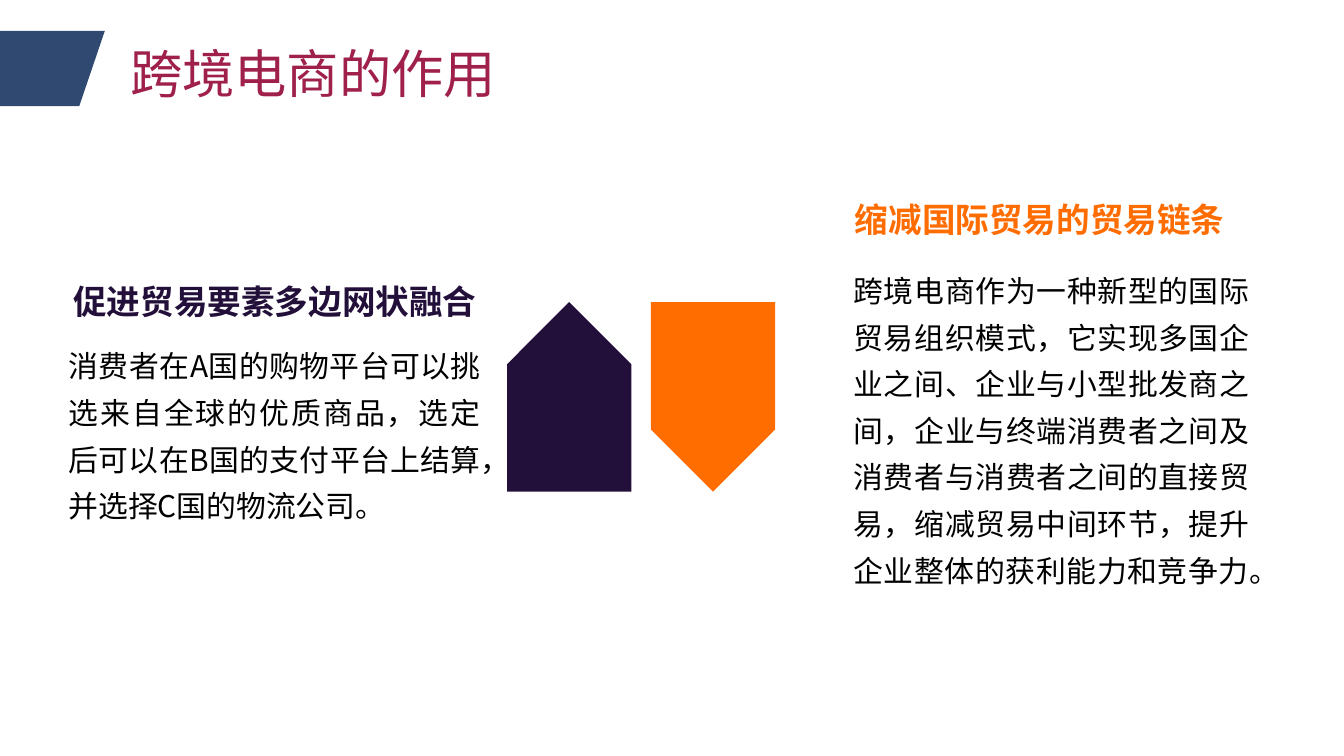
from dataclasses import dataclass

from lxml import etree
from pptx import Presentation
from pptx.dml.color import RGBColor
from pptx.enum import shapes, text
from pptx.oxml import ns
from pptx.util import Pt

FONT = "Noto Sans CJK SC"
NAVY, ORANGE, PURPLE, CRIMSON, BLACK = "304971", "FF6C00", "23103A", "A0204C", "000000"


@dataclass
class Passage:
    placeholder: int
    box: tuple
    wording: str
    size: float
    color: str
    align: text.PP_ALIGN
    bold: bool = False
    spacing: float = 1.0


@dataclass
class Arrow:
    box: tuple
    rotation: float
    color: str


PASSAGES = [
    Passage(0, (62.64, 18.72, 242.64, 41.04), "跨境电商的作用", 28, CRIMSON, text.PP_ALIGN.LEFT),
    Passage(1, (29.52, 146.88, 235.44, 28.8), "促进贸易要素多边网状融合", 18, PURPLE,
            text.PP_ALIGN.CENTER, bold=True),
    Passage(2, (29.52, 177.12, 235.44, 108),
            "消费者在A国的购物平台可以挑选来自全球的优质商品，选定后可以在B国的支付平台上结算，"
            "并选择C国的物流公司。",
            16, BLACK, text.PP_ALIGN.JUSTIFY, spacing=1.3),
    Passage(3, (449.28, 102.96, 215.28, 28.8), "缩减国际贸易的贸易链条", 18, ORANGE,
            text.PP_ALIGN.CENTER, bold=True),
    Passage(4, (450, 136.8, 226.8, 183.6),
            "跨境电商作为一种新型的国际贸易组织模式，它实现多国企业之间、企业与小型批发商之间，"
            "企业与终端消费者之间及消费者与消费者之间的直接贸易，缩减贸易中间环节，"
            "提升企业整体的获利能力和竞争力。",
            16, BLACK, text.PP_ALIGN.JUSTIFY, spacing=1.3),
]

ARROWS = [
    Arrow((331.2, 179.28, 101.52, 66.6), 90, ORANGE),
    Arrow((254.16, 179.28, 101.52, 66.6), 270, PURPLE),
]


def apply(target, formats: dict) -> None:
    for attribute, value in formats.items():
        setattr(target, attribute, value)


def rgb(color: str) -> RGBColor:
    return RGBColor.from_string(color)


def paint(shape, color: str) -> None:
    shape.shadow.inherit = False
    shape.fill.solid()
    shape.fill.fore_color.rgb = rgb(color)
    shape.line.fill.background()


def write_passage(slide, passage: Passage) -> None:
    holder = slide.placeholders[passage.placeholder]
    apply(holder, dict(zip(("left", "top", "width", "height"), map(Pt, passage.box))))
    frame = holder.text_frame
    apply(frame, {
        "word_wrap": True,
        "auto_size": text.MSO_AUTO_SIZE.SHAPE_TO_FIT_TEXT,
        "vertical_anchor": text.MSO_ANCHOR.TOP,
    })
    paragraph = frame.paragraphs[0]
    properties = paragraph._p.get_or_add_pPr()
    properties.set("marL", "0")
    properties.set("indent", "0")
    etree.SubElement(properties, ns.qn("a:buNone"))
    apply(paragraph, {
        "alignment": passage.align,
        "line_spacing": passage.spacing,
        "space_before": Pt(0),
    })
    run = paragraph.add_run()
    run.text = passage.wording
    apply(run.font, {"name": FONT, "size": Pt(passage.size), "bold": passage.bold})
    run.font.color.rgb = rgb(passage.color)
    east_asian = etree.SubElement(run._r.get_or_add_rPr(), ns.qn("a:ea"))
    east_asian.set("typeface", FONT)


def draw_arrow(slide, arrow: Arrow) -> None:
    pentagon = slide.shapes.add_shape(shapes.MSO_SHAPE.PENTAGON, *map(Pt, arrow.box))
    pentagon.rotation = arrow.rotation
    paint(pentagon, arrow.color)


def draw_banner(slide) -> None:
    outline = slide.shapes.build_freeform(Pt(0), Pt(16.56))
    corners = [(56.16, 16.56), (42.48, 56.88), (0, 56.88)]
    outline.add_line_segments([(Pt(x), Pt(y)) for x, y in corners], close=True)
    paint(outline.convert_to_shape(), NAVY)


def main() -> None:
    deck = Presentation()
    apply(deck, {"slide_width": Pt(720), "slide_height": Pt(405)})
    slide = deck.slides.add_slide(deck.slide_layouts.get_by_name("Comparison"))
    draw_banner(slide)
    for arrow in ARROWS:
        draw_arrow(slide, arrow)
    for passage in PASSAGES:
        write_passage(slide, passage)
    deck.save("out.pptx")


if __name__ == "__main__":
    main()
